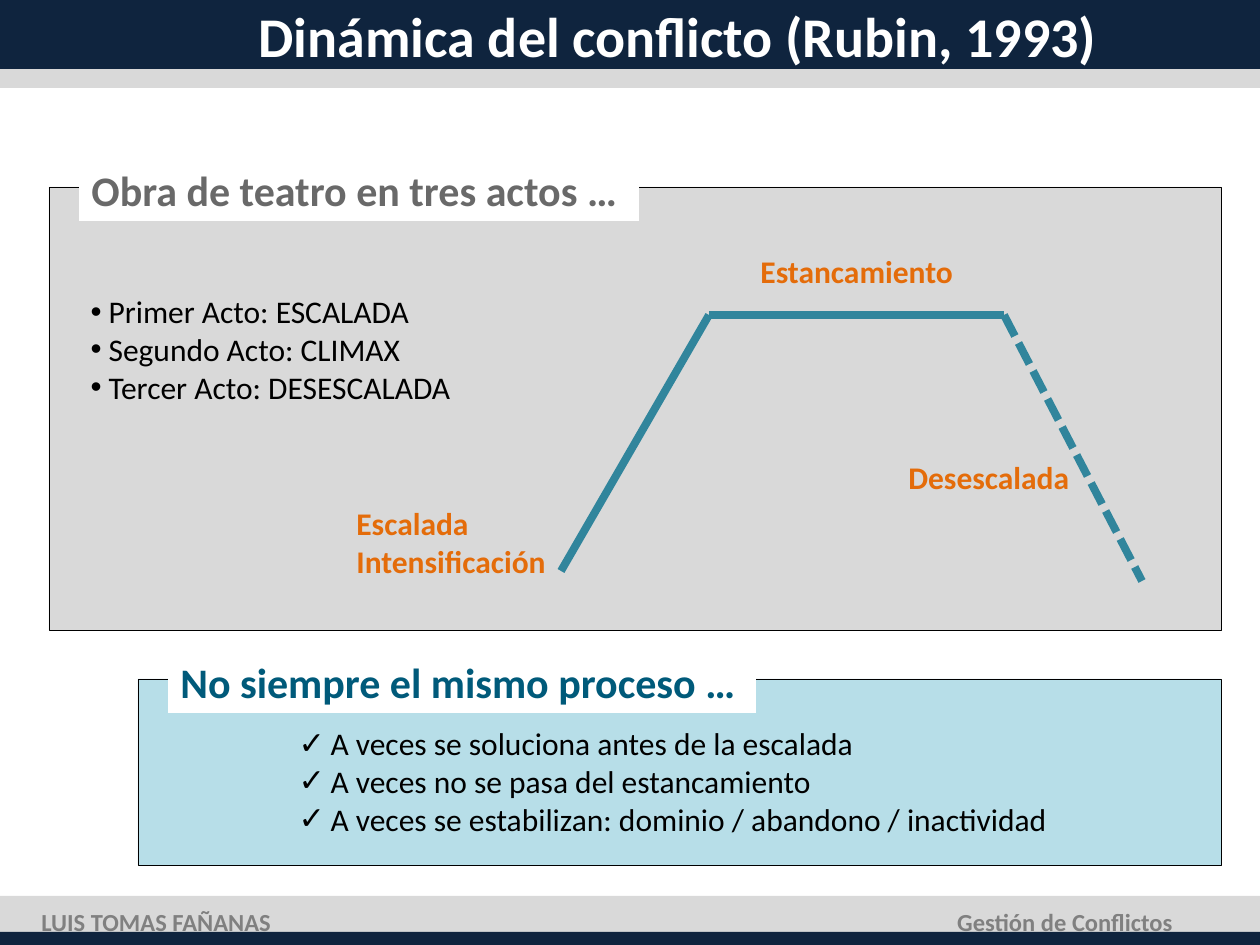
from lxml import etree
from pptx import Presentation
from pptx import util as u
from pptx.dml.color import RGBColor
from pptx.enum import dml, shapes, text
from pptx.oxml.ns import qn

PX = 914400 / 126
FONT = "Calibri"
COLORS = {
    "navy": "0F243E", "grey": "D9D9D9", "white": "FFFFFF", "black": "000000",
    "heading_grey": "696969", "heading_blue": "005A7A", "light_blue": "B7DEE8",
    "teal": "31859C", "orange": "E46C0A", "footer": "808080",
}


def color(name):
    return RGBColor.from_string(COLORS[name])


def emu(*lengths):
    return [u.Emu(round(length * PX)) for length in lengths]


def inside(box, left, top, *size):
    """Turn an offset within a box into a position on the page."""
    return (box[0] + left, box[1] + top, *size)


def add_rectangle(page, box, fill, outline=None):
    rectangle = page.shapes.add_shape(shapes.MSO_SHAPE.RECTANGLE, *emu(*box))
    rectangle.shadow.inherit = False
    rectangle.fill.solid()
    rectangle.fill.fore_color.rgb = color(fill)
    if outline:
        rectangle.line.color.rgb = color(outline)
        rectangle.line.width = u.Pt(0.25)
    else:
        rectangle.line.fill.background()
    return rectangle


def write(shape, lines, size, ink, bold=True, align=text.PP_ALIGN.LEFT,
          anchor=text.MSO_ANCHOR.TOP, wrap=False, bullet=None, indent=0):
    frame = shape.text_frame
    frame.auto_size = text.MSO_AUTO_SIZE.NONE
    frame.word_wrap = wrap
    frame.vertical_anchor = anchor
    for number, line in enumerate(lines):
        para = frame.add_paragraph() if number else frame.paragraphs[0]
        para.alignment = align
        para.space_before = u.Pt(0)
        if bullet:
            hang = emu(indent)[0]
            properties = para._p.get_or_add_pPr()
            properties.set("marL", str(hang))
            properties.set("indent", str(-hang))
            etree.SubElement(properties, qn("a:buFont"), typeface="Arial")
            etree.SubElement(properties, qn("a:buChar"), char=bullet)
        span = para.add_run()
        span.text = line
        span.font.name = FONT
        span.font.size = u.Pt(size)
        span.font.bold = bold
        span.font.color.rgb = color(ink)


def add_label(page, box, lines, size=18, ink="orange", **style):
    label = page.shapes.add_textbox(*emu(*box))
    write(label, lines, size, ink, **style)


def place(placeholder, box):
    """Move a placeholder to a box and in front of what is already drawn."""
    placeholder.left, placeholder.top, placeholder.width, placeholder.height = emu(*box)
    placeholder.element.getparent().append(placeholder.element)


def add_header(page, box, title):
    left, top, width, height = box
    add_rectangle(page, box, "grey")
    add_rectangle(page, (left, top, width, 69), "navy")
    place(page.shapes.title, inside(box, 246, 0, 952, 70))
    write(page.shapes.title, [title], 32, "white",
          anchor=text.MSO_ANCHOR.MIDDLE, wrap=True)


def add_footer(page, box, author, subject):
    add_rectangle(page, inside(box, 0, 0, box[2], 43), "grey")
    add_rectangle(page, inside(box, 0, 36, box[2], 13), "navy")
    middle = text.MSO_ANCHOR.MIDDLE
    add_label(page, inside(box, 29, 4, 257, 43), [author], 14, "footer", anchor=middle)
    add_label(page, inside(box, 942, 4, 243, 43), [subject], 14, "footer",
              anchor=middle, align=text.PP_ALIGN.RIGHT)


def add_panel(page, box, fill, heading, heading_width, ink):
    """Draw an outlined panel whose heading overlaps the top edge."""
    add_rectangle(page, box, fill, "black")
    tab = add_rectangle(page, inside(box, 30, -29, heading_width, 63), "white")
    write(tab, [heading], 24, ink)


def add_list(placeholder, box, lines, bullet, indent):
    place(placeholder, box)
    write(placeholder, lines, 18, "black", bold=False, wrap=True,
          bullet=bullet, indent=indent)


def add_conflict_curve(page, box):
    points = [(512, 384), (660, 128), (955, 128), (1093, 394)]
    stages = [
        (["Escalada", "Intensificación"], (295, 311, 215, 89)),
        (["Estancamiento"], (699, 59, 219, 50)),
        (["Desescalada"], (847, 265, 188, 50)),
    ]
    for start, end, (lines, spot) in zip(points, points[1:], stages):
        stroke = page.shapes.add_connector(
            shapes.MSO_CONNECTOR.STRAIGHT,
            *emu(*inside(box, *start), *inside(box, *end)))
        stroke.line.color.rgb = color("teal")
        stroke.line.width = u.Pt(4.5)
        if end == points[-1]:
            stroke.line.dash_style = dml.MSO_LINE.SQUARE_DOT
        etree.SubElement(stroke.element.spPr, qn("a:effectLst"))
        add_label(page, inside(box, *spot), lines)


def main():
    deck = Presentation()
    deck.slide_width, deck.slide_height = emu(1260, 945)
    page = deck.slides.add_slide(deck.slide_layouts.get_by_name("Two Content"))
    acts, outcomes = page.placeholders[1], page.placeholders[2]

    add_header(page, (0, 0, 1260, 88), "Dinámica del conflicto (Rubin, 1993)")

    play = (49, 187, 1172, 443)
    add_panel(page, play, "grey", "Obra de teatro en tres actos …", 560, "heading_grey")
    add_list(acts, inside(play, 29, 99, 394, 127),
             ["Primer Acto: ESCALADA", "Segundo Acto: CLIMAX",
              "Tercer Acto: DESESCALADA"], "•", 18)
    add_conflict_curve(page, play)

    process = (138, 679, 1083, 186)
    add_panel(page, process, "light_blue", "No siempre el mismo proceso …", 588,
              "heading_blue")
    add_list(outcomes, inside(process, 148, 39, 915, 127),
             ["A veces se soluciona antes de la escalada",
              "A veces no se pasa del estancamiento",
              "A veces se estabilizan: dominio / abandono / inactividad"], "✓", 32)

    add_footer(page, (0, 896, 1260, 49), "LUIS TOMAS FAÑANAS", "Gestión de Conflictos")
    deck.save("out.pptx")


if __name__ == "__main__":
    main()
